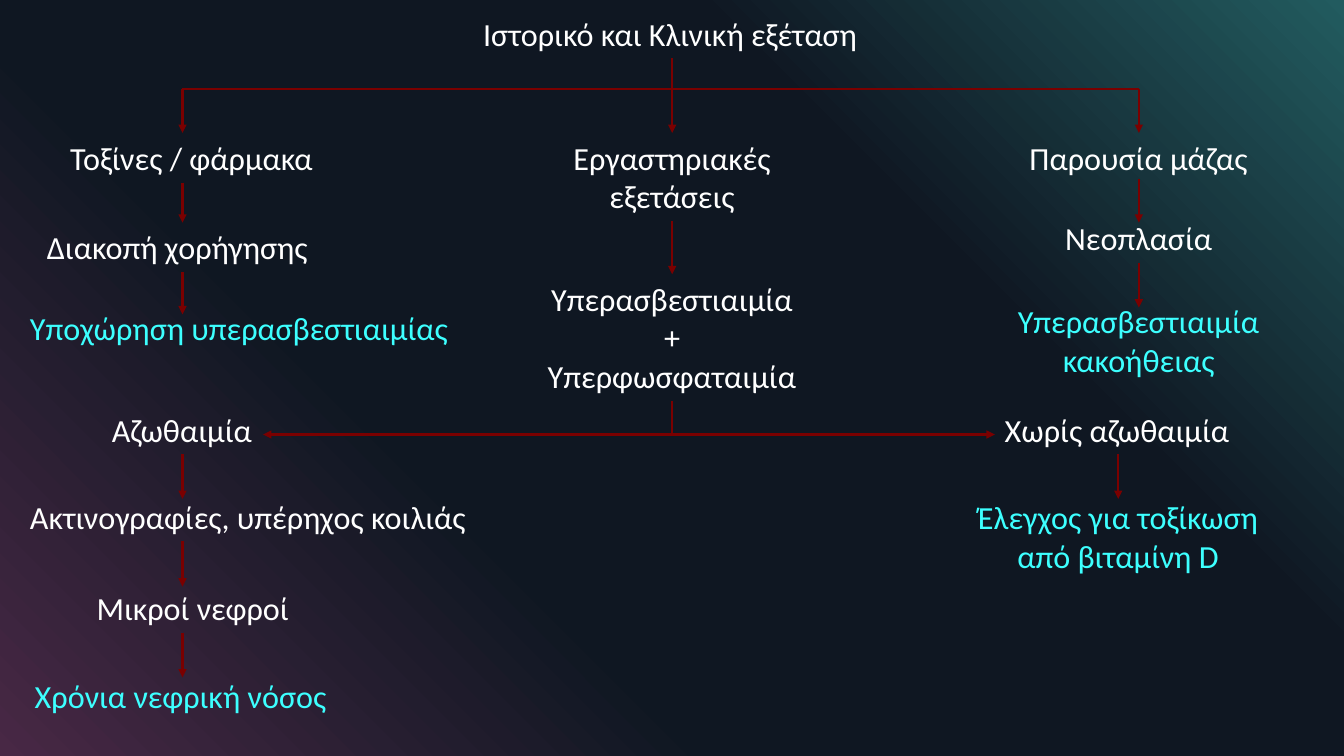
from copy import deepcopy

from lxml.etree import SubElement
from pptx import Presentation
from pptx.dml.color import RGBColor
from pptx.enum.shapes import MSO_CONNECTOR
from pptx.enum.text import MSO_AUTO_SIZE, PP_ALIGN
from pptx.oxml.ns import qn
from pptx.util import Cm, Pt


def color(hex_string):
    return RGBColor.from_string(hex_string)


def add_line(x1, y1, x2, y2, arrow=True):
    line = slide.shapes.add_connector(
        MSO_CONNECTOR.STRAIGHT, Cm(x1), Cm(y1), Cm(x2), Cm(y2))
    line.line.color.rgb = color("7A0000")
    line.line.width = Pt(1.5)
    if arrow:
        SubElement(line.line._get_or_add_ln(), qn("a:tailEnd"), type="triangle")
    SubElement(line._element.spPr, qn("a:effectLst"))
    return line


prs = Presentation()
prs.slide_width, prs.slide_height = Cm(33.87), Cm(19.05)
slide = prs.slides.add_slide(prs.slide_layouts[6])

backdrop = slide.background.fill
backdrop.gradient()
backdrop.gradient_angle = 45
stop_list = backdrop.gradient_stops[0]._gs.getparent()
for _ in range(2):
    stop_list.append(deepcopy(stop_list[0]))
backdrop_colors = [(0, "482845"), (0.34, "0F1722"), (0.69, "0F1722"), (1, "225B5F")]
for stop, (position, shade) in zip(backdrop.gradient_stops, backdrop_colors):
    stop.position = position
    stop.color.rgb = color(shade)

WHITE, CYAN = "FFFFFF", "3DFFFF"
LEFT, CENTER = PP_ALIGN.LEFT, PP_ALIGN.CENTER
left_x, middle_x, vitamin_x, right_x = 4.6, 16.94, 28.18, 28.7

steps = {
    "history": ("Ιστορικό και Κλινική εξέταση", middle_x, 0.23, 10.03, WHITE, LEFT),
    "toxins": ("Τοξίνες / φάρμακα", 4.86, 3.35, 6.68, WHITE, LEFT),
    "withdrawal": ("Διακοπή χορήγησης", left_x, 5.61, 7.34, WHITE, LEFT),
    "remission": ("Υποχώρηση υπερασβεστιαιμίας", 6.08, 7.65, 11.15, CYAN, LEFT),
    "lab tests": ("Εργαστηριακές\vεξετάσεις", middle_x, 3.35, 5.54, WHITE, CENTER),
    "calcium": ("Υπερασβεστιαιμία\v+\vΥπερφωσφαταιμία", middle_x, 6.91, 6.83, WHITE, CENTER),
    "azotemia": ("Αζωθαιμία", left_x, 10.21, 4.06, WHITE, LEFT),
    "imaging": ("Ακτινογραφίες, υπέρηχος κοιλιάς", 6.31, 12.42, 11.61, WHITE, LEFT),
    "small kidneys": ("Μικροί νεφροί", 4.89, 14.71, 5.41, WHITE, LEFT),
    "kidney disease": ("Χρόνια νεφρική νόσος", left_x, 16.92, 7.95, CYAN, LEFT),
    "no azotemia": ("Χωρίς αζωθαιμία", vitamin_x, 10.21, 6.22, WHITE, LEFT),
    "vitamin D": ("Έλεγχος για τοξίκωση\vαπό βιταμίνη D", vitamin_x, 12.42, 7.65, CYAN, CENTER),
    "mass": ("Παρουσία μάζας", right_x, 3.35, 6.07, WHITE, CENTER),
    "neoplasia": ("Νεοπλασία", right_x, 5.38, 4.24, WHITE, CENTER),
    "malignancy": ("Υπερασβεστιαιμία\vκακοήθειας", right_x, 7.47, 6.65, CYAN, CENTER),
}

boxes = {}
for step, (wording, center_x, top, width, ink, alignment) in steps.items():
    height = 0.26 + 0.98 * len(wording.split("\v"))
    box = slide.shapes.add_textbox(
        Cm(center_x - width / 2), Cm(top), Cm(width), Cm(height))
    frame = box.text_frame
    frame.text = wording
    frame.word_wrap = False
    frame.auto_size = MSO_AUTO_SIZE.SHAPE_TO_FIT_TEXT
    frame.paragraphs[0].alignment = alignment
    for run in frame.paragraphs[0].runs:
        run.font.name = "Calibri"
        run.font.size = Pt(23)
        run.font.color.rgb = color(ink)
    boxes[step] = box

upper_y, lower_y = 2.24, 10.95
add_line(middle_x, upper_y, left_x, upper_y, arrow=False)
add_line(middle_x, upper_y, right_x, upper_y, arrow=False)
add_line(middle_x, lower_y, 6.63, lower_y)
add_line(middle_x, lower_y, 25.07, lower_y)

descents = [
    (middle_x, 1.47, upper_y, "history", None, False),
    (left_x, upper_y, 3.35, None, None, True),
    (middle_x, upper_y, 3.35, None, "lab tests", True),
    (right_x, upper_y, 3.35, None, "mass", True),
    (left_x, 4.6, 5.61, None, "withdrawal", True),
    (left_x, 6.85, 7.92, "withdrawal", None, True),
    (middle_x, 5.57, 6.91, "lab tests", "calcium", True),
    (middle_x, 10.11, lower_y, "calcium", None, False),
    (left_x, 11.45, 12.57, "azotemia", None, True),
    (left_x, 13.64, 14.78, None, None, True),
    (left_x, 15.95, 17.07, None, None, True),
    (vitamin_x, 11.45, 12.57, "no azotemia", None, True),
    (right_x, 4.5, 5.61, None, None, True),
    (right_x, 6.62, 7.75, "neoplasia", None, True),
]
for x, start_y, end_y, source, target, arrow in descents:
    descent = add_line(x, start_y, x, end_y, arrow)
    if source:
        descent.begin_connect(boxes[source], 2)
    if target:
        descent.end_connect(boxes[target], 0)

prs.save("out.pptx")
